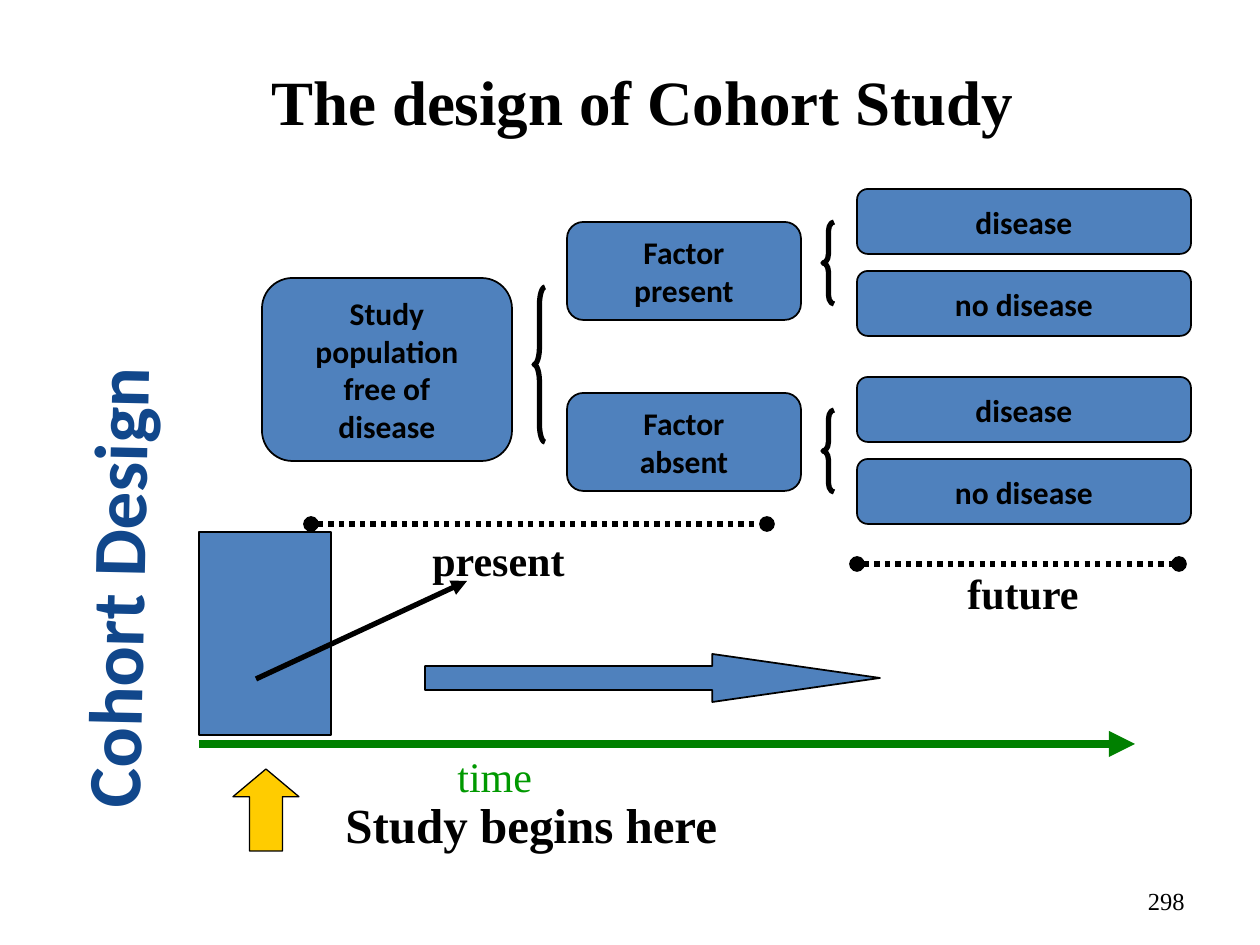
from dataclasses import dataclass

from lxml import etree
from pptx import Presentation
from pptx.dml.color import RGBColor
from pptx.enum.dml import MSO_LINE_DASH_STYLE as Dash
from pptx.enum.shapes import MSO_CONNECTOR, MSO_SHAPE as Shape
from pptx.enum.text import MSO_ANCHOR as Anchor, MSO_AUTO_SIZE as AutoSize, PP_ALIGN as Align
from pptx.oxml.ns import qn
from pptx.util import Pt

PX_PER_INCH = 126


@dataclass(frozen=True)
class Theme:
    serif: str = "Times New Roman"
    sans: str = "Calibri"
    black: str = "000000"
    blue: str = "4F81BD"
    navy: str = "11478B"
    yellow: str = "FFCC00"
    axis: str = "008000"
    green: str = "009900"
    title_size: int = 36
    side_size: int = 43
    start_size: int = 28
    label_size: int = 24
    box_size: int = 18
    number_size: int = 14


THEME = Theme()


def px(length):
    return round(length * 914400 / PX_PER_INCH)


def write(frame, text, font, size, color, bold, align):
    frame.text = text
    for paragraph in frame.paragraphs:
        paragraph.alignment = align
        for run in paragraph.runs:
            run.font.name = font
            run.font.size = Pt(size)
            run.font.bold = bold
            run.font.color.rgb = RGBColor.from_string(color)


def add_text(slide, text, box, size, color=THEME.black, font=THEME.serif,
             bold=True, align=Align.LEFT, rotation=0):
    """Wrapped text, centred vertically in its box."""
    holder = slide.shapes.add_textbox(*map(px, box))
    holder.rotation = rotation
    frame = holder.text_frame
    frame.word_wrap = True
    frame.vertical_anchor = Anchor.MIDDLE
    write(frame, text, font, size, color, bold, align)


def add_label(slide, text, box, size=THEME.label_size, color=THEME.black, bold=True):
    """One-line label whose box fits its text."""
    holder = slide.shapes.add_textbox(*map(px, box))
    frame = holder.text_frame
    frame.word_wrap = False
    frame.auto_size = AutoSize.SHAPE_TO_FIT_TEXT
    write(frame, text, THEME.serif, size, color, bold, Align.LEFT)


def add_figure(slide, kind, box, fill=THEME.blue, line_width=1, adjustments=()):
    figure = slide.shapes.add_shape(kind, *map(px, box))
    figure.shadow.inherit = False
    if fill:
        figure.fill.solid()
        figure.fill.fore_color.rgb = RGBColor.from_string(fill)
    else:
        figure.fill.background()
    figure.line.color.rgb = RGBColor.from_string(THEME.black)
    figure.line.width = Pt(line_width)
    for index, value in enumerate(adjustments):
        figure.adjustments[index] = value
    return figure


def add_group_box(slide, text, box):
    group_box = add_figure(slide, Shape.ROUNDED_RECTANGLE, box)
    frame = group_box.text_frame
    frame.word_wrap = False
    frame.vertical_anchor = Anchor.MIDDLE
    write(frame, text, THEME.sans, THEME.box_size, THEME.black, True, Align.CENTER)


def add_brace(slide, box, curl):
    add_figure(slide, Shape.LEFT_BRACE, box, None, 3, (curl, 0.5))


def add_line(slide, start, end, color=THEME.black, width=3, dash=None,
             head=None, tail="triangle"):
    connector = slide.shapes.add_connector(
        MSO_CONNECTOR.STRAIGHT, *map(px, (*start, *end)))
    line = connector.line
    line.color.rgb = RGBColor.from_string(color)
    line.width = Pt(width)
    if dash:
        line.dash_style = dash
    properties = connector._element.spPr
    outline = properties.find(qn("a:ln"))
    for tag, end_type in (("a:headEnd", head), ("a:tailEnd", tail)):
        if end_type:
            etree.SubElement(outline, qn(tag), type=end_type)
    etree.SubElement(properties, qn("a:effectLst"))


def add_span(slide, left, right, y):
    add_line(slide, (left, y), (right, y), dash=Dash.ROUND_DOT, head="oval", tail="oval")


def draw_timeline(slide):
    add_figure(slide, Shape.RECTANGLE, (199, 532, 132, 203))
    add_line(slide, (199, 744), (1135, 744), THEME.axis, 5)
    add_label(slide, "time", (445, 744, 106, 49), color=THEME.green, bold=False)
    add_figure(slide, Shape.UP_ARROW, (233, 769, 66, 82), THEME.yellow, 0.75, (0.5, 0.42))
    add_label(slide, "Study begins here", (333, 788, 423, 55), THEME.start_size)


def draw_tree(slide):
    add_group_box(slide, "Study\npopulation\nfree of\ndisease", (262, 278, 250, 183))
    add_brace(slide, (534, 287, 11, 155), 1.58)
    for row, factor in enumerate(("present", "absent")):
        add_group_box(slide, f"Factor\n{factor}", (567, 222 + 171 * row, 234, 98))
        branch_top = 189 + 188 * row
        add_brace(slide, (823, branch_top + 33, 11, 82), 0.83)
        for step, outcome in enumerate(("disease", "no disease")):
            add_group_box(slide, outcome, (857, branch_top + 82 * step, 334, 65))


def draw_periods(slide):
    add_span(slide, 311, 767, 524)
    add_span(slide, 857, 1179, 564)
    add_figure(slide, Shape.RIGHT_ARROW, (425, 654, 455, 48), adjustments=(0.5, 3.49))
    add_label(slide, "present", (420, 528, 168, 49))
    add_label(slide, "future", (955, 561, 146, 49))
    add_line(slide, (256, 679), (467, 581))


def main():
    deck = Presentation()
    deck.slide_width, deck.slide_height = px(1260), px(945)
    slide = deck.slides.add_slide(deck.slide_layouts[6])

    # Title and slide number
    add_text(slide, "The design of Cohort Study", (126, 53, 1033, 94),
             THEME.title_size, align=Align.CENTER)
    add_text(slide, "298", (903, 876, 294, 50), THEME.number_size,
             bold=False, align=Align.RIGHT)

    # Time axis, study groups, then the periods over them
    draw_timeline(slide)
    draw_tree(slide)
    draw_periods(slide)

    # Heading along the left side
    add_text(slide, "Cohort Design", (-163, 484, 556, 116), THEME.side_size,
             THEME.navy, THEME.sans, rotation=271.1)

    deck.save("out.pptx")


if __name__ == "__main__":
    main()
